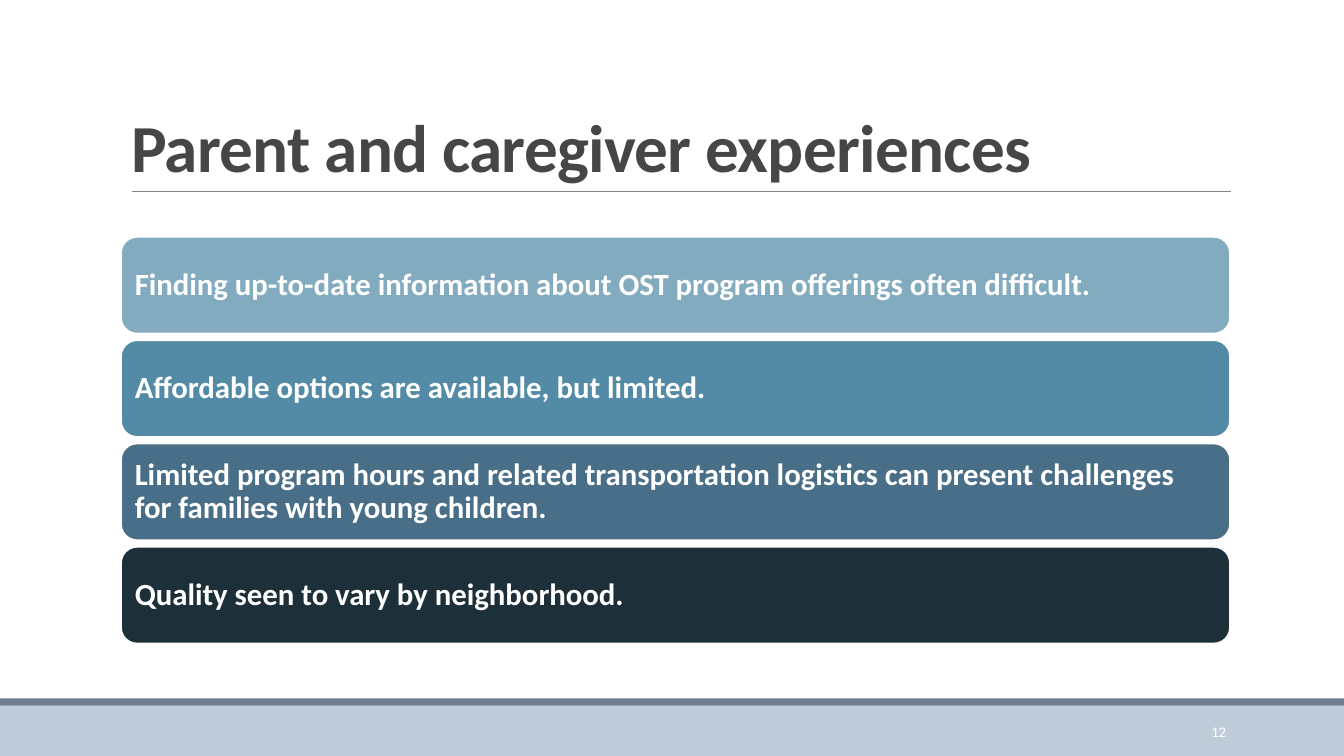
"""Build the slide on parent and caregiver experiences."""
from dataclasses import dataclass

from lxml.etree import SubElement
from pptx import Presentation
from pptx.dml.color import RGBColor
from pptx.enum.shapes import MSO_CONNECTOR, MSO_SHAPE
from pptx.enum.text import MSO_ANCHOR as ANCHOR, MSO_AUTO_SIZE as AUTO, PP_ALIGN as ALIGN
from pptx.oxml.ns import qn
from pptx.shapes.autoshape import Shape
from pptx.slide import Slide
from pptx.text.text import TextFrame
from pptx.util import Inches, Pt

FONT = "Calibri"
LEFT, WIDTH = 1.2, 11
CARD_TOP, CARD_HEIGHT, CARD_PITCH = 2.35, 0.96, 1.025


@dataclass
class Card:
    text: str
    fill: str


CARDS = [
    Card("Finding up-to-date information about OST program offerings often difficult.", "82ABC0"),
    Card("Affordable options are available, but limited.", "538BA7"),
    Card("Limited program hours and related transportation logistics can present "
         "challenges for families with young children.", "496E87"),
    Card("Quality seen to vary by neighborhood.", "1D303A"),
]


def rgb(value: str) -> RGBColor:
    return RGBColor.from_string(value)


def write(tf: TextFrame, text: str, size: float, color: str, bold: bool = True,
          align: ALIGN = ALIGN.LEFT, anchor: ANCHOR = ANCHOR.MIDDLE,
          line_spacing: float = 1.0) -> None:
    tf.text = text
    tf.word_wrap = True
    tf.auto_size = AUTO.NONE
    tf.vertical_anchor = anchor
    p = tf.paragraphs[0]
    p.alignment = align
    p.line_spacing = line_spacing
    p.font.name, p.font.size, p.font.bold = FONT, Pt(size), bold
    p.font.color.rgb = rgb(color)


def add_box(s: Slide, kind: MSO_SHAPE, left: float, top: float,
            width: float, height: float, fill: str) -> Shape:
    sp = s.shapes.add_shape(kind, Inches(left), Inches(top), Inches(width), Inches(height))
    sp.shadow.inherit = False
    sp.fill.solid()
    sp.fill.fore_color.rgb = rgb(fill)
    sp.line.fill.background()
    return sp


def add_title(s: Slide, text: str) -> None:
    title = s.shapes.title
    title.left, title.top = Inches(LEFT), Inches(0.31)
    title.width, title.height = Inches(WIDTH), Inches(1.59)
    tf = title.text_frame
    write(tf, text, 48, "464646", anchor=ANCHOR.BOTTOM, line_spacing=0.85)
    tf.paragraphs[0]._p.pPr.find(qn("a:defRPr")).set("spc", "-50")


def add_rule(s: Slide) -> None:
    rule = s.shapes.add_connector(MSO_CONNECTOR.STRAIGHT, Inches(1.31), Inches(1.9),
                                  Inches(12.21), Inches(1.9))
    rule.line.color.rgb = rgb("848484")
    rule.line.width = Pt(0.5)
    SubElement(rule._element.spPr, qn("a:effectLst"))


def add_card(s: Slide, card: Card, top: float) -> None:
    sp = add_box(s, MSO_SHAPE.ROUNDED_RECTANGLE, LEFT, top, WIDTH, CARD_HEIGHT, card.fill)
    sp.line.color.rgb = rgb("FFFFFF")
    sp.line.width = Pt(1.25)
    tf = sp.text_frame
    tf.margin_left = tf.margin_right = tf.margin_top = tf.margin_bottom = Inches(0.09)
    write(tf, card.text, 22, "FFFFFF", line_spacing=0.9)


def main() -> None:
    prs = Presentation()
    prs.slide_width, prs.slide_height = Inches(13.33), Inches(7.5)
    s = prs.slides.add_slide(prs.slide_layouts[5])
    add_box(s, MSO_SHAPE.RECTANGLE, 0, 7, 13.33, 0.5, "BECCDA")
    add_box(s, MSO_SHAPE.RECTANGLE, 0, 6.93, 13.33, 0.07, "6D7D8C")
    add_rule(s)
    add_title(s, "Parent and caregiver experiences")
    for i, card in enumerate(CARDS):
        add_card(s, card, CARD_TOP + i * CARD_PITCH)
    number = s.shapes.add_textbox(Inches(10.83), Inches(7.06), Inches(1.43), Inches(0.4))
    write(number.text_frame, "12", 10.5, "FFFFFF", bold=False, align=ALIGN.RIGHT)
    prs.save("out.pptx")


if __name__ == "__main__":
    main()
